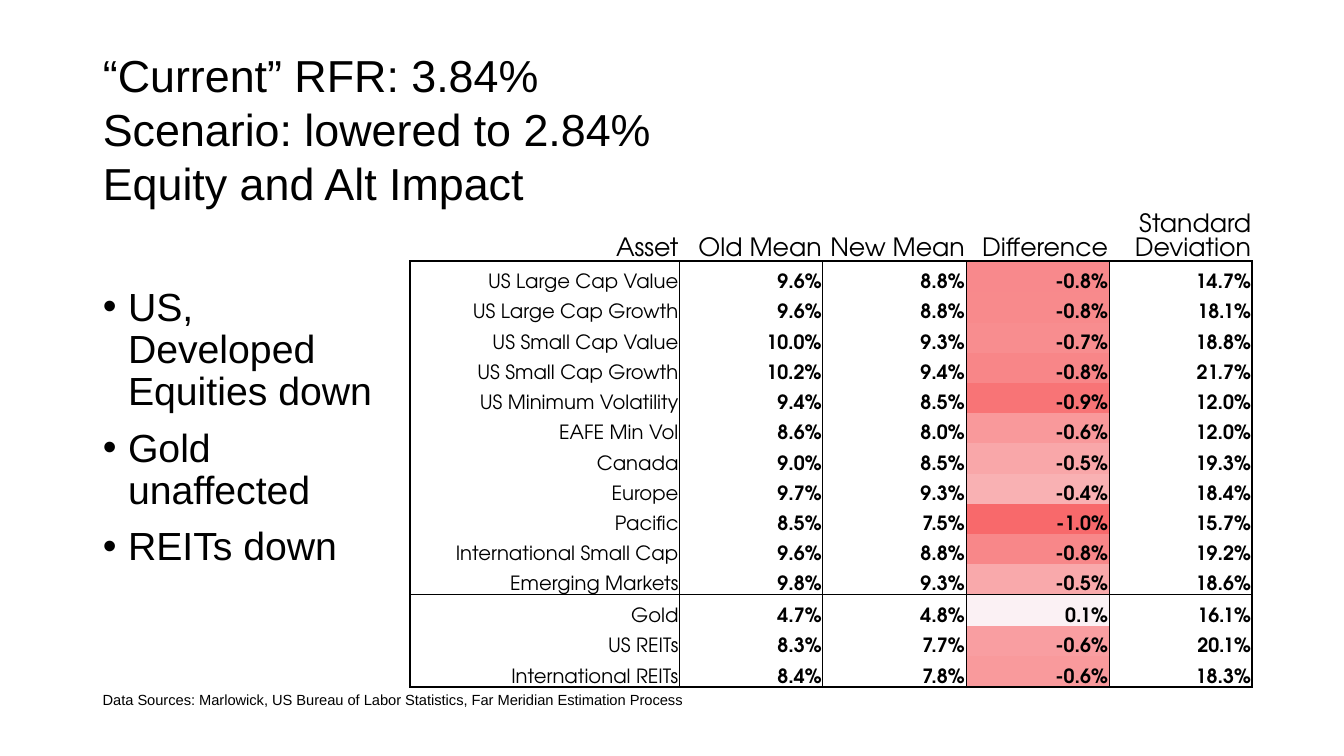
from pptx import Presentation
from pptx.dml.color import RGBColor
from pptx.enum import text as t
from pptx.oxml import parse_xml
from pptx.oxml import ns
from pptx.util import Inches, Pt

HUES = {"ink": "000000", "cell": "FFFFFF"}
SANS, GEO = "Arial", "TeX Gyre Adventor"

TITLE = ["“Current” RFR: 3.84%", "Scenario: lowered to 2.84%",
         "Equity and Alt Impact"]
POINTS = ["US, Developed Equities down", "Gold unaffected", "REITs down"]
NOTE = ("Data Sources: Marlowick, US Bureau of Labor Statistics, "
        "Far Meridian Estimation Process")
HEADS = ["Asset", "Old Mean", "New Mean", "Difference", "Standard Deviation"]

# Asset, old mean, new mean, difference, deviation, shade of the difference
ASSETS = [
    ("US Large Cap Value", "9.6%", "8.8%", "-0.8%", "14.7%", "F8898C"),
    ("US Large Cap Growth", "9.6%", "8.8%", "-0.8%", "18.1%", "F88A8C"),
    ("US Small Cap Value", "10.0%", "9.3%", "-0.7%", "18.8%", "F88D8F"),
    ("US Small Cap Growth", "10.2%", "9.4%", "-0.8%", "21.7%", "F88688"),
    ("US Minimum Volatility", "9.4%", "8.5%", "-0.9%", "12.0%", "F87476"),
    ("EAFE Min Vol", "8.6%", "8.0%", "-0.6%", "12.0%", "F9999B"),
    ("Canada", "9.0%", "8.5%", "-0.5%", "19.3%", "F9A7A9"),
    ("Europe", "9.7%", "9.3%", "-0.4%", "18.4%", "F9B1B3"),
    ("Pacific", "8.5%", "7.5%", "-1.0%", "15.7%", "F8696B"),
    ("International Small Cap", "9.6%", "8.8%", "-0.8%", "19.2%", "F88789"),
    ("Emerging Markets", "9.8%", "9.3%", "-0.5%", "18.6%", "F9A9AB"),
    ("Gold", "4.7%", "4.8%", "0.1%", "16.1%", "FBF1F4"),
    ("US REITs", "8.3%", "7.7%", "-0.6%", "20.1%", "F99EA1"),
    ("International REITs", "8.4%", "7.8%", "-0.6%", "18.3%", "F99A9C"),
]
LAST = len(ASSETS)
DIFF, DEV = 3, 4
# Rule weight in points below each of these rows
RULES = {0: 1.5, 11: 1, LAST: 1.5}


def place(shape, left, top, width, height):
    shape.left, shape.top = Inches(left), Inches(top)
    shape.width, shape.height = Inches(width), Inches(height)


def add_run(para, words, size, face=SANS, bold=False):
    run = para.add_run()
    run.text = words
    font = run.font
    font.name, font.size, font.bold = face, Pt(size), bold
    font.color.rgb = RGBColor.from_string(HUES["ink"])


def add_title(slide):
    box = slide.shapes.title
    place(box, 0.92, 0.4, 7.28, 1.75)
    frame = box.text_frame
    frame.word_wrap = True
    frame.auto_size = t.MSO_AUTO_SIZE.NONE
    frame.vertical_anchor = t.MSO_ANCHOR.MIDDLE
    para = frame.paragraphs[0]
    para.alignment = t.PP_ALIGN.LEFT
    for i, line in enumerate(TITLE):
        if i:
            para.add_line_break()
        add_run(para, line, 32)


def add_list(slide):
    box = slide.placeholders[1]
    place(box, 0.92, 2.15, 2.95, 4.6)
    frame = box.text_frame
    frame.word_wrap = True
    frame.auto_size = t.MSO_AUTO_SIZE.NONE
    frame.vertical_anchor = t.MSO_ANCHOR.TOP
    frame.margin_top = Inches(0.7)
    for i, point in enumerate(POINTS):
        para = frame.add_paragraph() if i else frame.paragraphs[0]
        props = para._p.get_or_add_pPr()
        props.set("marL", str(Inches(0.25)))
        props.set("indent", str(Inches(-0.25)))
        props.append(parse_xml(f'<a:buChar {ns.nsdecls("a")} char="•"/>'))
        para.line_spacing = 0.9
        para.space_before = Pt(10 if i else 0)
        add_run(para, point, 28)


def add_edge(cell, side, weight):
    """Draw one cell border; a weight of 0 means no line."""
    fill = (f'<a:solidFill><a:srgbClr val="{HUES["ink"]}"/></a:solidFill>'
            if weight else "<a:noFill/>")
    cell._tc.get_or_add_tcPr().append(parse_xml(
        f'<a:ln{side} {ns.nsdecls("a")} w="{Pt(weight)}">{fill}</a:ln{side}>'))


def set_cell(cell, words, row, col, shade):
    # Borders: heavy frame around the body, thin lines between columns
    add_edge(cell, "L", 0 if row == 0 else 1.5 if col == 0 else 0.5)
    add_edge(cell, "R", 0 if row == 0 else 1.5 if col == DEV else 0.5)
    add_edge(cell, "T", RULES.get(row - 1, 0))
    add_edge(cell, "B", RULES.get(row, 0))
    if shade:
        cell.fill.solid()
        cell.fill.fore_color.rgb = RGBColor.from_string(shade)
    else:
        cell.fill.background()
    cell.margin_left = cell.margin_right = cell.margin_top = Inches(0.01)
    cell.margin_bottom = 0
    cell.vertical_anchor = t.MSO_ANCHOR.BOTTOM
    para = cell.text_frame.paragraphs[0]
    para.alignment = t.PP_ALIGN.RIGHT
    add_run(para, words, 14 if row else 18, GEO, row > 0 and col > 0)


def add_grid(slide):
    grid = slide.shapes.add_table(
        LAST + 1, len(HEADS), Inches(4.07), Inches(1.88),
        Inches(8.35), Inches(4.87)).table
    grid.first_row = grid.horz_banding = False
    for col, part in enumerate(grid.columns):
        part.width = Inches(1.42 if col else 2.67)
    for row, part in enumerate(grid.rows):
        part.height = Inches(0.3 if row else 0.71)
    for row in (1, 12, LAST):
        grid.rows[row].height = Inches(0.31)

    for col, head in enumerate(HEADS):
        set_cell(grid.cell(0, col), head, 0, col, None)
    for row, (*words, shade) in enumerate(ASSETS, 1):
        for col, word in enumerate(words):
            hue = shade if col == DIFF else HUES["cell"]
            set_cell(grid.cell(row, col), word, row, col, hue)


def add_note(slide):
    box = slide.shapes.add_textbox(
        Inches(0.92), Inches(6.8), Inches(12.04), Inches(0.29))
    frame = box.text_frame
    frame.word_wrap = True
    frame.auto_size = t.MSO_AUTO_SIZE.SHAPE_TO_FIT_TEXT
    add_run(frame.paragraphs[0], NOTE, 10.5)


def main():
    deck = Presentation()
    deck.slide_width, deck.slide_height = Inches(13.33), Inches(7.5)
    slide = deck.slides.add_slide(deck.slide_layouts[1])
    add_title(slide)
    add_list(slide)
    add_grid(slide)
    add_note(slide)
    deck.save("out.pptx")


if __name__ == "__main__":
    main()
